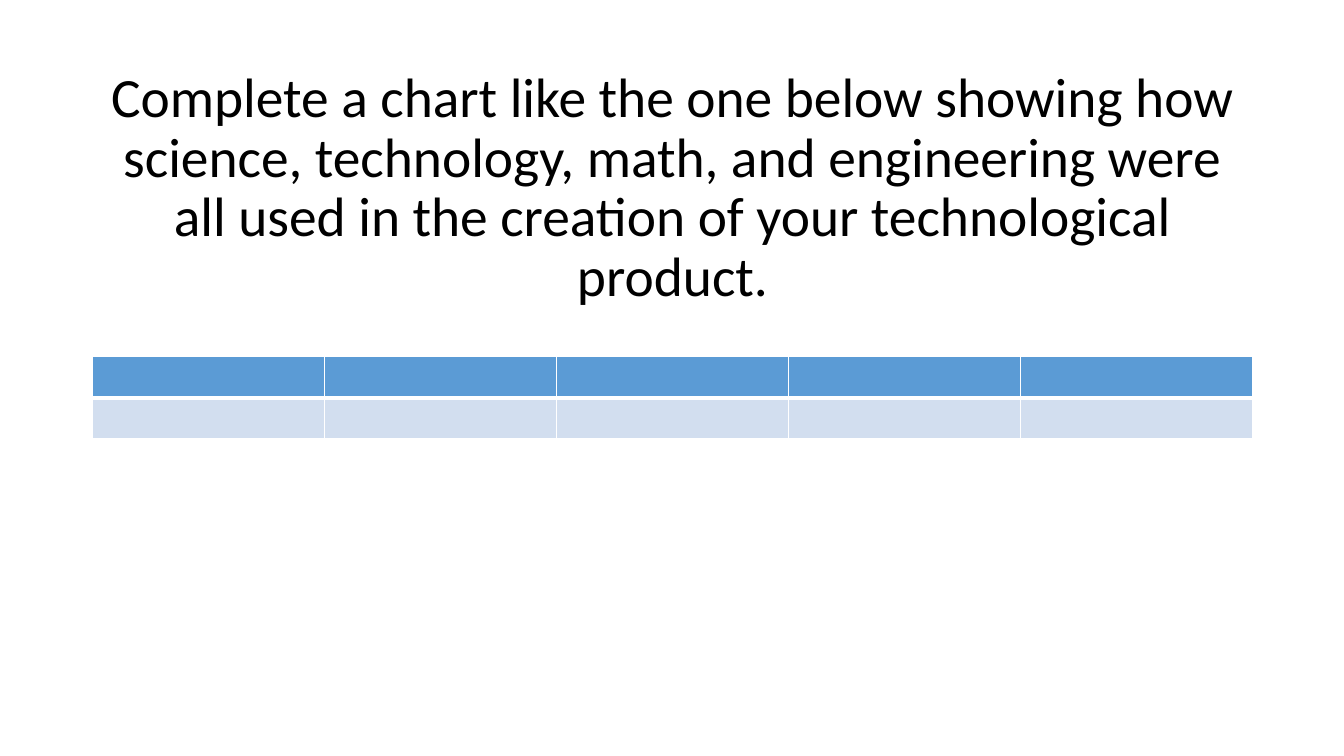
import lxml.etree
import pptx
import pptx.dml.color
import pptx.enum.text
import pptx.oxml.ns
import pptx.util

Inches = pptx.util.Inches
Pt = pptx.util.Pt

COLORS = {"text": "000000", "header": "5B9BD5", "body": "D2DEEF", "border": "FFFFFF"}


class SlideBuilder:
    def __init__(self, slide, font, colors):
        self.slide = slide
        self.font = font
        self.colors = colors

    def color(self, name):
        return pptx.dml.color.RGBColor.from_string(self.colors[name])

    def title(self, text, left, top, width, height, size):
        title = self.slide.shapes.title
        title.left, title.top = Inches(left), Inches(top)
        title.width, title.height = Inches(width), Inches(height)
        frame = title.text_frame
        frame.text = text
        frame.word_wrap = True
        frame.auto_size = pptx.enum.text.MSO_AUTO_SIZE.NONE
        frame.vertical_anchor = pptx.enum.text.MSO_ANCHOR.MIDDLE
        # The deep lower margin lifts the centred text clear of the table
        frame.margin_bottom = Inches(0.65)
        para = frame.paragraphs[0]
        para.alignment = pptx.enum.text.PP_ALIGN.CENTER
        para.line_spacing = 0.9
        span = para.runs[0]
        span.font.name = self.font
        span.font.size = Pt(size)
        span.font.color.rgb = self.color("text")

    def cell_borders(self, cell, widths):
        """Draw cell borders; widths maps the sides L, R, T, B to points."""
        properties = cell._tc.get_or_add_tcPr()
        qn = pptx.oxml.ns.qn
        for index, (side, width) in enumerate(widths.items()):
            line = lxml.etree.Element(qn(f"a:ln{side}"), w=str(Pt(width)))
            fill = lxml.etree.SubElement(line, qn("a:solidFill"))
            lxml.etree.SubElement(fill, qn("a:srgbClr"), val=self.colors["border"])
            properties.insert(index, line)

    def blank_table(self, left, top, width, height, columns):
        """Add an empty table with one header row and one body row."""
        table = self.slide.shapes.add_table(
            2, columns, Inches(left), Inches(top), Inches(width), Inches(height)
        ).table
        rows = [("header", {"L": 1, "R": 1, "T": 1, "B": 3}),
                ("body", {"L": 1, "R": 1, "T": 3, "B": 1})]
        for row, (fill, widths) in zip(table.rows, rows):
            for cell in row.cells:
                cell.fill.solid()
                cell.fill.fore_color.rgb = self.color(fill)
                self.cell_borders(cell, widths)


def main():
    deck = pptx.Presentation()
    deck.slide_width, deck.slide_height = Inches(13.33), Inches(7.5)
    slide = deck.slides.add_slide(deck.slide_layouts.get_by_name("Title Only"))
    builder = SlideBuilder(slide, "Calibri", COLORS)
    builder.title(
        "Complete a chart like the one below showing how science, technology, math, "
        "and engineering were all used in the creation of your technological product.",
        0.92, 1.45, 11.5, 1.45, 39.6,
    )
    builder.blank_table(0.92, 3.54, 11.5, 0.81, columns=5)
    deck.save("out.pptx")


if __name__ == "__main__":
    main()
